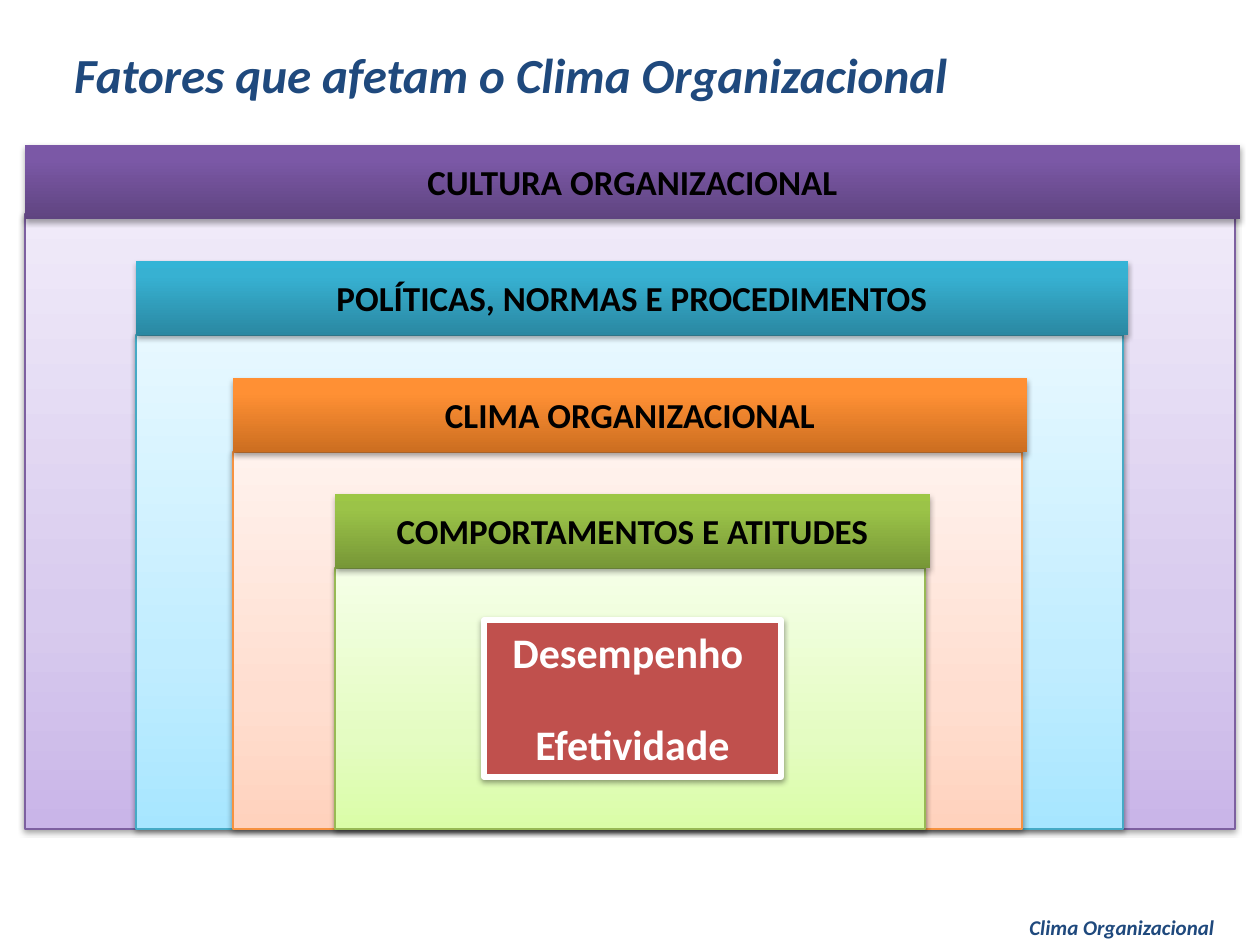
import copy
from dataclasses import dataclass

import pptx
import pptx.dml.color
import pptx.enum.shapes
import pptx.enum.text
import pptx.oxml
import pptx.oxml.ns
import pptx.util

EMU_PER_PX = 914400 / 126


@dataclass(frozen=True)
class Theme:
    font: str = "Calibri"
    navy: str = "1F497D"
    black: str = "000000"
    white: str = "FFFFFF"
    red: str = "C0504D"
    title_size: int = 28
    result_size: int = 24
    band_size: int = 20
    footer_size: int = 12


theme = Theme()
Color = pptx.dml.color.RGBColor.from_string
Shape = pptx.enum.shapes.MSO_SHAPE


def add_box(slide, preset, box, colors, positions, opacity, distance):
    """Add a shadowed box, with a bottom-to-top gradient if it has several colours."""
    shape = slide.shapes.add_shape(preset, *[round(px * EMU_PER_PX) for px in box])
    if len(colors) == 1:
        shape.fill.solid()
        shape.fill.fore_color.rgb = Color(colors[0])
    else:
        shape.fill.gradient()
        shape.fill.gradient_angle = 90
        stop_list = shape._element.spPr.find(".//" + pptx.oxml.ns.qn("a:gsLst"))
        stop_list.append(copy.deepcopy(stop_list[0]))
        for stop, color, position in zip(shape.fill.gradient_stops, colors, positions):
            stop.color.rgb = Color(color)
            stop.position = position
    shape.line.fill.background()
    shape.shadow.inherit = False
    effects = shape._element.spPr.find(pptx.oxml.ns.qn("a:effectLst"))
    effects.append(pptx.oxml.parse_xml(
        f'<a:outerShdw {pptx.oxml.ns.nsdecls("a")} blurRad="40000" dist="{distance}" '
        f'dir="5400000" rotWithShape="0"><a:srgbClr val="000000">'
        f'<a:alpha val="{opacity * 1000}"/></a:srgbClr></a:outerShdw>'))
    return shape


def write(paragraph, text, size, color, italic=False, align="LEFT"):
    """Write one bold paragraph."""
    paragraph.text = text
    paragraph.alignment = getattr(pptx.enum.text.PP_ALIGN, align)
    font = paragraph.font
    font.name, font.size = theme.font, pptx.util.Pt(size)
    font.bold, font.italic = True, italic
    font.color.rgb = Color(color)


presentation = pptx.Presentation()
presentation.slide_width = pptx.util.Inches(10)
presentation.slide_height = pptx.util.Inches(7.5)
slide = presentation.slides.add_slide(presentation.slide_layouts[5])

# Title
title = slide.shapes.title
title.left, title.top, title.width, title.height = [
    round(px * EMU_PER_PX) for px in (74, 45, 1111, 58)]
frame = title.text_frame
frame.margin_left = frame.margin_top = frame.margin_right = frame.margin_bottom = 0
frame.vertical_anchor = pptx.enum.text.MSO_ANCHOR.MIDDLE
write(frame.paragraphs[0], "Fatores que afetam o Clima Organizacional",
      theme.title_size, theme.navy, italic=True)

# Nested levels, from the outside in:
# heading, left, band width, band top, body top, band colours, body colours, outline
levels = [
    ("CULTURA ORGANIZACIONAL", 25, 1215, 145, 214,
     ("5F4480", "7B58A6", "7C57A8"), ("C9B5E8", "D8CBEE", "F0EAF9"), "7D60A0"),
    ("POLÍTICAS, NORMAS E PROCEDIMENTOS", 136, 992, 261, 335,
     ("2A88A2", "37B1D2", "34B4D6"), ("A7E6FF", "C1EDFF", "E7F8FF"), "46AAC5"),
    ("CLIMA ORGANIZACIONAL", 233, 794, 378, 452,
     ("CC6E20", "FF9034", "FF9136"), ("FFD2BD", "FFDED0", "FFF2ED"), "F69240"),
    ("COMPORTAMENTOS E ATITUDES", 335, 595, 494, 568,
     ("779737", "9BC348", "9DC746"), ("DAFDA7", "E4FCC2", "F5FFE7"), "98B955"),
]
BODY_BOTTOM = 829
BAND_HEIGHT = 74
BAND_OVERHANG = 5

# Pale bodies, all ending on one base line
for heading, left, width, band_top, body_top, band_colors, body_colors, outline in levels:
    box = (left, body_top, width - BAND_OVERHANG, BODY_BOTTOM - body_top)
    body = add_box(slide, Shape.FLOWCHART_PROCESS, box, body_colors, (0, 0.35, 1), 38, 20000)
    body.line.color.rgb = Color(outline)
    body.line.width = pptx.util.Pt(0.75)

# Heading bands
for heading, left, width, band_top, body_top, band_colors, body_colors, outline in levels:
    box = (left, band_top, width, BAND_HEIGHT)
    band = add_box(slide, Shape.FLOWCHART_PROCESS, box, band_colors, (0, 0.8, 1), 35, 23000)
    band.text_frame.vertical_anchor = pptx.enum.text.MSO_ANCHOR.MIDDLE
    write(band.text_frame.paragraphs[0], heading, theme.band_size, theme.black, align="CENTER")

# Result at the centre
result = add_box(slide, Shape.RECTANGLE, (484, 620, 297, 157), (theme.red,), (), 38, 20000)
result.line.color.rgb = Color(theme.white)
result.line.width = pptx.util.Pt(3)
frame = result.text_frame
frame.vertical_anchor = pptx.enum.text.MSO_ANCHOR.TOP
write(frame.paragraphs[0], "Desempenho ", theme.result_size, theme.white, align="CENTER")
effectiveness = frame.add_paragraph()
write(effectiveness, "Efetividade", theme.result_size, theme.white, align="CENTER")
effectiveness.space_before = pptx.util.Pt(24)

# Footer
footer = slide.shapes.add_textbox(*[round(px * EMU_PER_PX) for px in (1017, 908, 213, 38)])
footer.text_frame.word_wrap = False
write(footer.text_frame.paragraphs[0], "Clima Organizacional",
      theme.footer_size, theme.navy, italic=True)

presentation.save("out.pptx")
